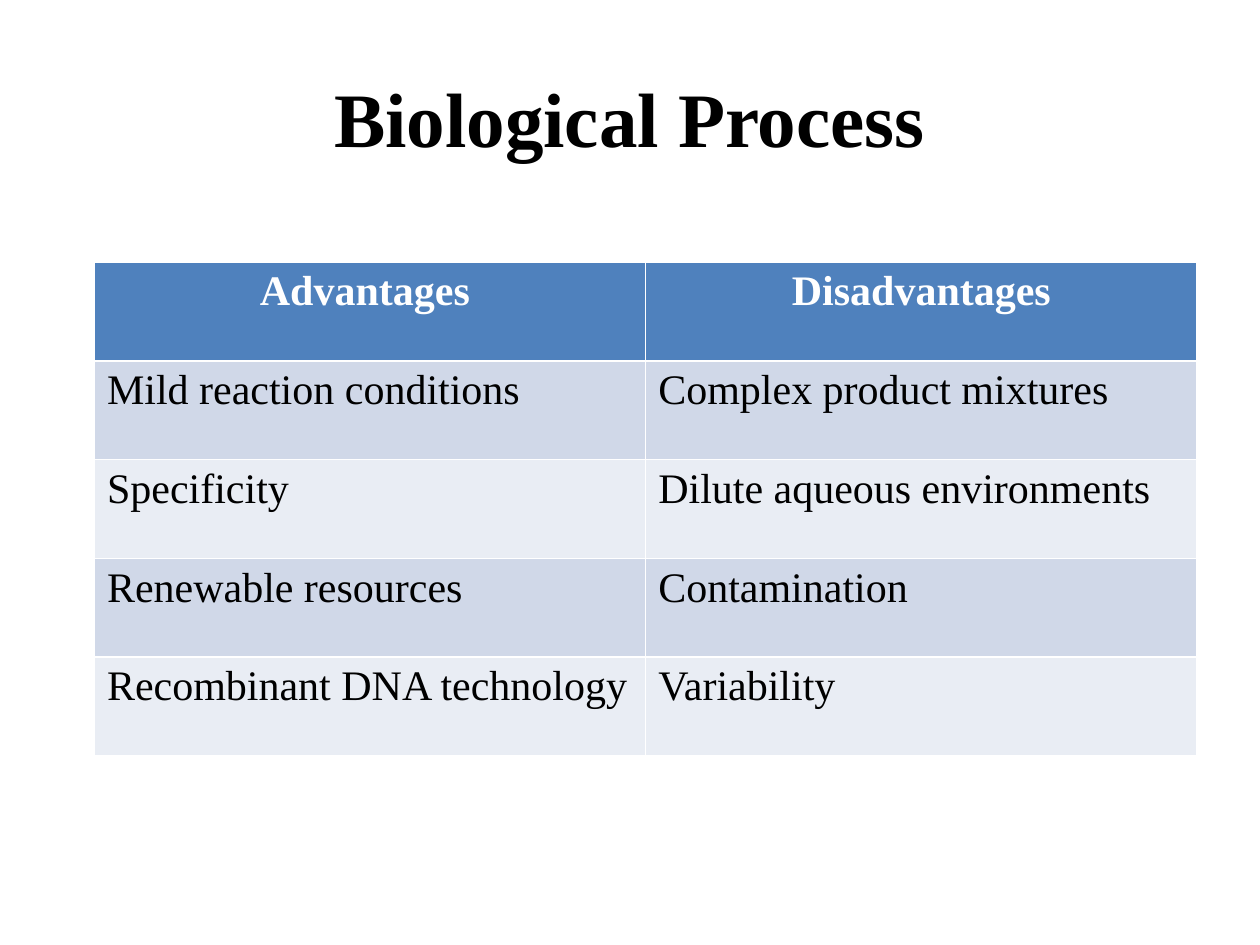
from pptx import Presentation
from pptx.dml.color import RGBColor
from pptx.enum.text import MSO_ANCHOR, PP_ALIGN
from pptx.util import Inches, Pt

FONT = "Times New Roman"
BLACK = RGBColor(0x00, 0x00, 0x00)
WHITE = RGBColor(0xFF, 0xFF, 0xFF)
HEADER_BLUE = RGBColor(0x4F, 0x81, 0xBD)
BAND_DARK = RGBColor(0xD0, 0xD8, 0xE8)
BAND_LIGHT = RGBColor(0xE9, 0xED, 0xF4)

ROWS = [
    ("Advantages ", "Disadvantages"),
    ("Mild reaction conditions", "Complex product mixtures"),
    ("Specificity", "Dilute aqueous environments"),
    ("Renewable resources", "Contamination"),
    ("Recombinant DNA technology", "Variability"),
]


def add_span(para, text, size, color, bold):
    span = para.add_run()
    span.text = text
    span.font.name = FONT
    span.font.size = Pt(size)
    span.font.bold = bold
    span.font.color.rgb = color


deck = Presentation()
deck.slide_width, deck.slide_height = Inches(10), Inches(7.5)
page = deck.slides.add_slide(deck.slide_layouts[5])

# Title
title = page.shapes.title
title.left, title.top = Inches(0.5), Inches(0.3)
title.width, title.height = Inches(9), Inches(1.25)
title.text_frame.vertical_anchor = MSO_ANCHOR.MIDDLE
title_para = title.text_frame.paragraphs[0]
title_para.alignment = PP_ALIGN.CENTER
add_span(title_para, "Biological Process", 44, BLACK, True)

# Comparison table: the default table style supplies the white rules
table = page.shapes.add_table(
    len(ROWS), len(ROWS[0]),
    Inches(0.75), Inches(2.08), Inches(8.75), Inches(3.92),
).table

for row, texts in enumerate(ROWS):
    is_header = row == 0
    band = BAND_DARK if row % 2 else BAND_LIGHT
    for column, text in enumerate(texts):
        cell = table.cell(row, column)
        cell.fill.solid()
        cell.fill.fore_color.rgb = HEADER_BLUE if is_header else band
        para = cell.text_frame.paragraphs[0]
        para.alignment = PP_ALIGN.CENTER if is_header else PP_ALIGN.LEFT
        add_span(para, text, 24, WHITE if is_header else BLACK, is_header)

deck.save("out.pptx")
